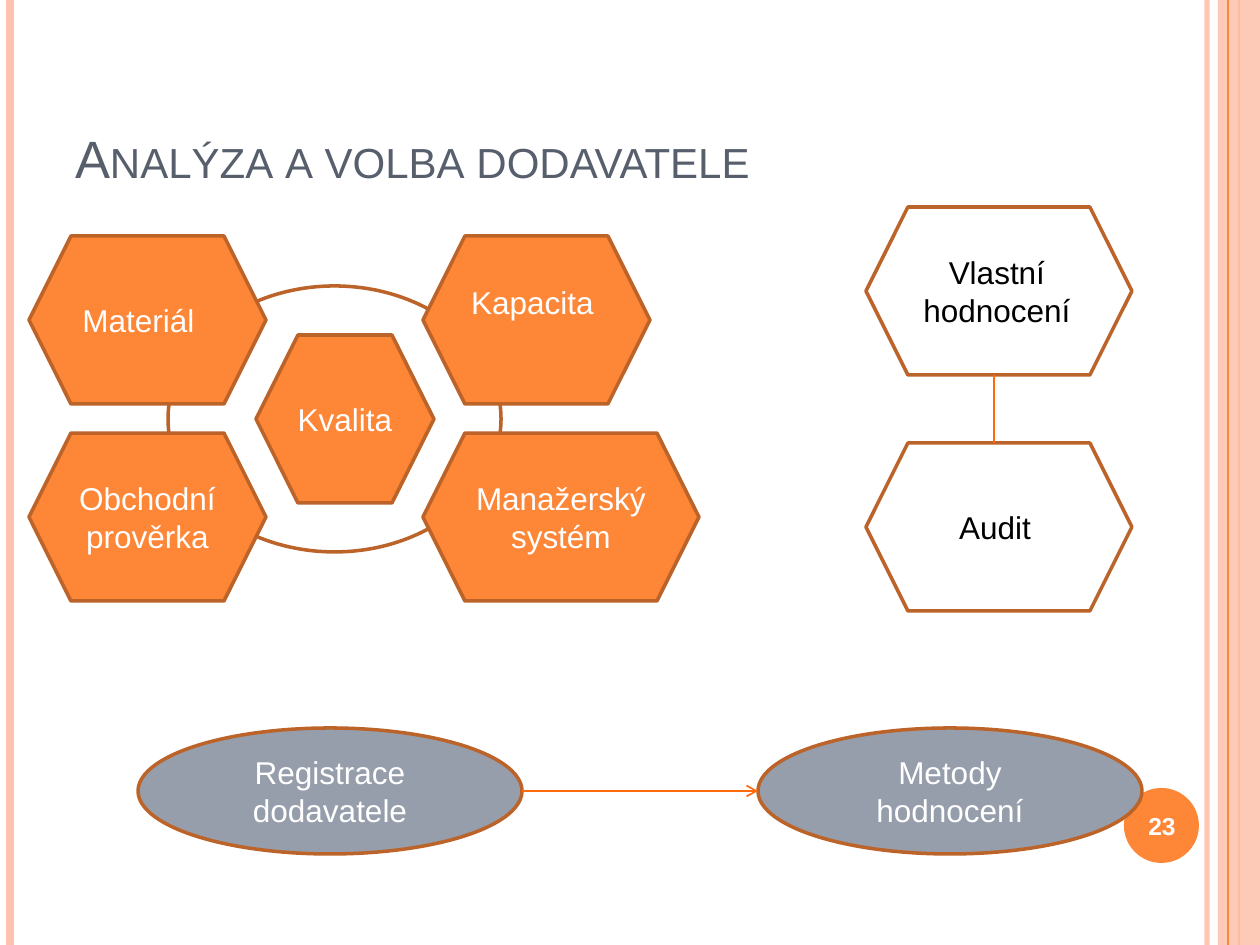
from dataclasses import dataclass

from lxml.etree import SubElement
from pptx import Presentation
from pptx.dml.color import RGBColor
from pptx.enum.shapes import MSO_CONNECTOR, MSO_SHAPE
from pptx.enum.text import MSO_ANCHOR, PP_ALIGN
from pptx.oxml.ns import qn
from pptx.util import Emu, Pt


@dataclass(frozen=True)
class Theme:
    font: str = "Arial"
    orange: str = "FE8637"
    peach: str = "FEC3AE"
    rust: str = "BC6329"
    link: str = "FF6B0A"
    slate: str = "969EAB"
    ink: str = "575F6D"
    white: str = "FFFFFF"
    black: str = "000000"
    title: int = 30
    body: int = 18
    number: int = 14
    edge: int = 2


THEME = Theme()
WIDE, HIGH = 1260, 945
INSET = 12


def px(n):
    return Emu(round(n * 914400 / 126))


def rgb(code):
    return RGBColor.from_string(code)


def fade(fill, percent):
    """Set the opacity of a solid fill found in a shape or a line."""
    color = next(fill.iter(qn("a:srgbClr")))
    SubElement(color, qn("a:alpha")).set("val", str(percent * 1000))


def write(shape, text, size=THEME.body, color=THEME.white, bold=False,
          caps=False, align=PP_ALIGN.CENTER, anchor=MSO_ANCHOR.MIDDLE,
          left=0, up=0):
    """Fill a shape with text; left and up move it off the centre by px."""
    frame = shape.text_frame
    frame.word_wrap = True
    frame.vertical_anchor = anchor
    frame.margin_left = px(INSET)
    frame.margin_right = px(INSET + 2 * left)
    frame.margin_top = px(6)
    frame.margin_bottom = px(6 + 2 * up)
    para = frame.paragraphs[0]
    para.alignment = align
    run = para.add_run()
    run.text = text
    font = run.font
    font.name, font.size, font.bold = THEME.font, Pt(size), bold
    font.color.rgb = rgb(color)
    if caps:
        run._r.get_or_add_rPr().set("cap", "small")


def label(slide, box, text, **style):
    write(slide.shapes.add_textbox(*map(px, box)), text, **style)


def draw(slide, kind, box, fill=None, edge=None):
    shape = slide.shapes.add_shape(kind, *map(px, box))
    shape.shadow.inherit = False
    if fill:
        shape.fill.solid()
        shape.fill.fore_color.rgb = rgb(fill)
    else:
        shape.fill.background()
    if edge:
        shape.line.color.rgb = rgb(edge)
        shape.line.width = Pt(THEME.edge)
    else:
        shape.line.fill.background()
    return shape


def rule(slide, start, end, color, width, arrow=False):
    line = slide.shapes.add_connector(
        MSO_CONNECTOR.STRAIGHT, *map(px, start + end))
    line.line.color.rgb = rgb(color)
    line.line.width = Pt(width)
    props = line._element.spPr
    if arrow:
        SubElement(props.find(qn("a:ln")), qn("a:tailEnd")).set("type", "arrow")
    SubElement(props, qn("a:effectLst"))
    return line


def stripe(slide, x, color, width):
    return rule(slide, (x, 0), (x, HIGH), color, width)


def frame(slide):
    """Draw the stripes at both sides and the disc of the page number."""
    pale = stripe(slide, 1207, THEME.peach, 3)
    fade(pale._element, 93)
    stripe(slide, 10, THEME.peach, 4.5)
    stripe(slide, 1239, THEME.orange, 1.5)
    band = draw(slide, MSO_SHAPE.RECTANGLE, (1218, 0, 42, HIGH), THEME.peach)
    fade(band._element, 87)
    stripe(slide, 1228, THEME.orange, 0.75)
    draw(slide, MSO_SHAPE.OVAL, (1124, 788, 75, 75), THEME.orange)


def hexes(slide, items, fill, color):
    for text, x, y, width, shift in items:
        cell = draw(slide, MSO_SHAPE.HEXAGON, (x, y, width, 168),
                    fill, THEME.rust)
        write(cell, text, color=color, **shift)


def criteria(slide):
    west, east, top, low = 29, 423, 236, 433
    draw(slide, MSO_SHAPE.OVAL, (168, 286, 333, 266), edge=THEME.rust)
    hexes(slide, [
        ("Kvalita", 256, 335, 178, {}),
        ("Kapacita", east, top, 227, {"left": 4, "up": 18}),
        ("Manažerský systém", east, low, 276, {}),
        ("Materiál", west, top, 237, {"left": 9}),
        ("Obchodní prověrka", west, low, 237, {}),
    ], THEME.orange, THEME.white)


def methods(slide):
    x, width, top, low = 866, 266, 207, 443
    hexes(slide, [
        ("Vlastní hodnocení", x, top, width, {"left": 2}),
        ("Audit", x, low, width, {"left": 4}),
    ], None, THEME.black)
    rule(slide, (994, top + 168), (994, low), THEME.link, 1)


def steps(slide):
    y, width, height = 728, 384, 126
    first, last = 138, 758
    for x, text in ((first, "Registrace dodavatele"),
                    (last, "Metody hodnocení")):
        oval = draw(slide, MSO_SHAPE.OVAL, (x, y, width, height),
                    THEME.slate, THEME.rust)
        write(oval, text)
    mid = y + height // 2
    rule(slide, (first + width, mid), (last, mid), THEME.link, 1, arrow=True)


def main():
    deck = Presentation()
    deck.slide_width, deck.slide_height = px(WIDE), px(HIGH)
    slide = deck.slides.add_slide(deck.slide_layouts[6])
    frame(slide)
    label(slide, (63, 38, 1029, 157), "Analýza a volba dodavatele",
          size=THEME.title, color=THEME.ink, caps=True,
          align=PP_ALIGN.LEFT, anchor=MSO_ANCHOR.BOTTOM)
    criteria(slide)
    methods(slide)
    steps(slide)
    label(slide, (1120, 790, 84, 72), "23", size=THEME.number, bold=True)
    deck.save("out.pptx")


if __name__ == "__main__":
    main()
